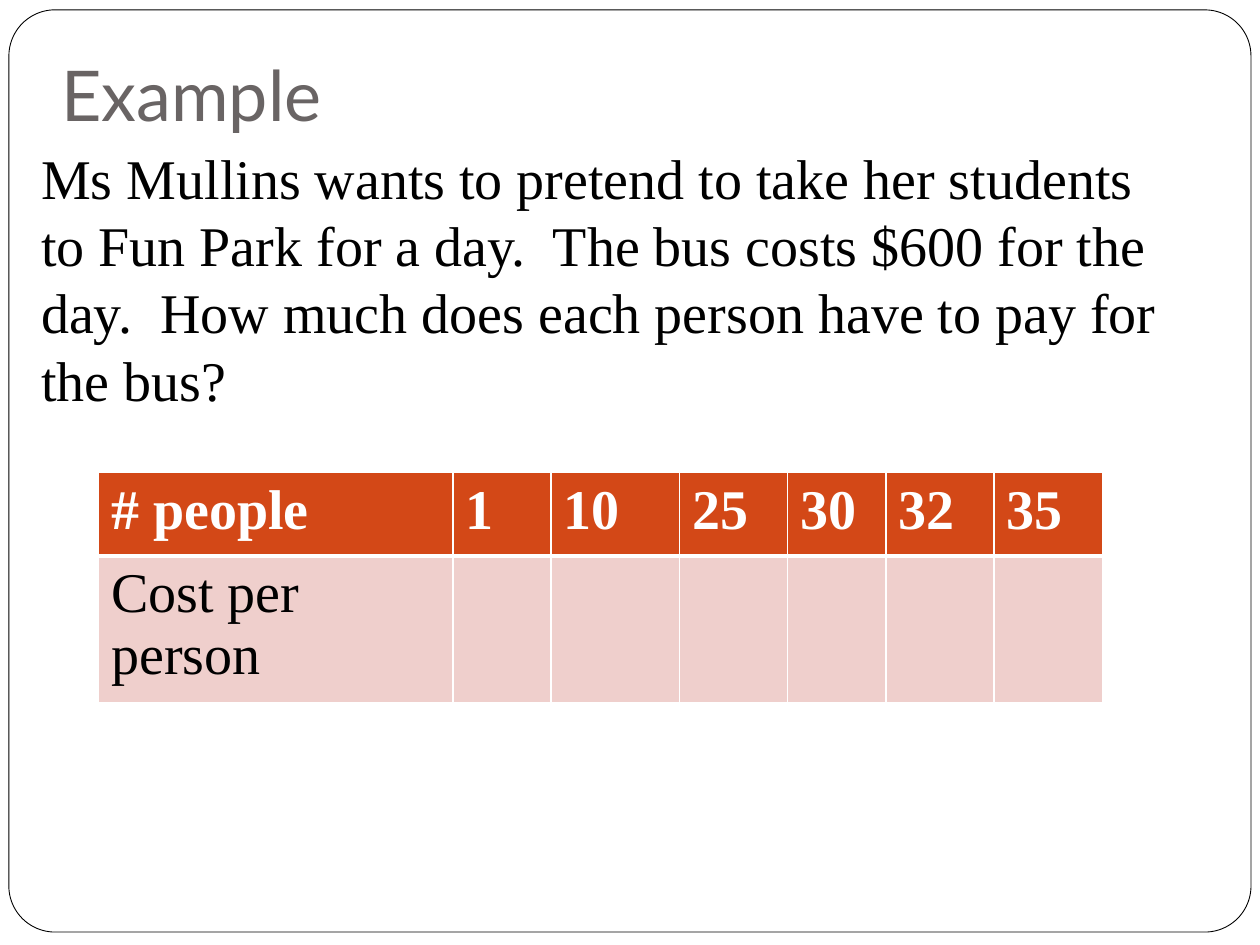
import pptx
import pptx.dml.color
import pptx.enum.shapes
import pptx.enum.text
import pptx.oxml
import pptx.oxml.ns
import pptx.util
from dataclasses import dataclass

Cm = pptx.util.Cm
Pt = pptx.util.Pt


@dataclass(frozen=True)
class Theme:
    white: str = "FFFFFF"
    black: str = "000000"
    title_grey: str = "696464"
    header_orange: str = "D34817"
    body_pink: str = "EFCFCC"
    title_font: str = "Lato"
    body_font: str = "Times New Roman"
    title_size: int = 40
    body_size: int = 32


THEME = Theme()


def rgb(color):
    return pptx.dml.color.RGBColor.from_string(color)


def add_run(paragraph, text, font, size, color, bold=False):
    run = paragraph.add_run()
    run.text = text
    run.font.name = font
    run.font.size = Pt(size)
    run.font.color.rgb = rgb(color)
    run.font.bold = bold


def add_text_box(slide, left, top, width, height, anchor):
    """Add a wrapping text box and return its text frame."""
    frame = slide.shapes.add_textbox(Cm(left), Cm(top), Cm(width), Cm(height)).text_frame
    frame.word_wrap = True
    frame.vertical_anchor = anchor
    return frame


def add_slide_frame(slide):
    shape = slide.shapes.add_shape(
        pptx.enum.shapes.MSO_SHAPE.ROUNDED_RECTANGLE, Cm(0.18), Cm(0.2), Cm(25.04), Cm(18.59))
    shape.adjustments[0] = 0.05
    shape.shadow.inherit = False
    shape.fill.solid()
    shape.fill.fore_color.rgb = rgb(THEME.white)
    shape.line.color.rgb = rgb(THEME.black)
    shape.line.width = Pt(0.5)


def set_borders(cell, bottom_width):
    """Draw white lines on all sides of a cell, widths in points."""
    properties = cell._tc.get_or_add_tcPr()
    widths = {"lnL": 1, "lnR": 1, "lnT": 1, "lnB": bottom_width}
    for position, (side, width) in enumerate(widths.items()):
        line = pptx.oxml.parse_xml(
            f'<a:{side} {pptx.oxml.ns.nsdecls("a")} w="{Pt(width)}"><a:solidFill>'
            f'<a:srgbClr val="{THEME.white}"/></a:solidFill></a:{side}>')
        properties.insert(position, line)


def add_cost_table(slide, rows, column_widths, row_heights):
    table = slide.shapes.add_table(
        len(rows), len(column_widths), Cm(1.99), Cm(9.53),
        Cm(sum(column_widths)), Cm(sum(row_heights))).table
    for column, width in zip(table.columns, column_widths):
        column.width = Cm(width)
    for row, height in zip(table.rows, row_heights):
        row.height = Cm(height)

    for row_index, texts in enumerate(rows):
        header = row_index == 0
        for cell, text in zip(table.rows[row_index].cells, texts):
            cell.fill.solid()
            cell.fill.fore_color.rgb = rgb(THEME.header_orange if header else THEME.body_pink)
            set_borders(cell, 3 if header else 1)
            if text:
                add_run(cell.text_frame.paragraphs[0], text, THEME.body_font, THEME.body_size,
                        THEME.white if header else THEME.black, header)


def main():
    presentation = pptx.Presentation()
    presentation.slide_width = Cm(25.4)
    presentation.slide_height = Cm(19.05)
    slide = presentation.slides.add_slide(presentation.slide_layouts[6])
    anchors = pptx.enum.text.MSO_ANCHOR

    # Rounded frame around the slide
    add_slide_frame(slide)

    # Title
    title = add_text_box(slide, 0.99, 0.58, 21.59, 2.41, anchors.BOTTOM)
    title.margin_bottom = Cm(0.25)
    add_run(title.paragraphs[0], "Example", THEME.title_font, THEME.title_size, THEME.title_grey)

    # Word problem
    problem = add_text_box(slide, 0.58, 2.77, 23.22, 5.74, anchors.TOP)
    add_run(problem.paragraphs[0],
            "Ms Mullins wants to pretend to take her students to Fun Park for a day.  "
            "The bus costs $600 for the day.  How much does each person have to pay for the bus?",
            THEME.body_font, THEME.body_size, THEME.black)

    # Table to fill in
    people = ["1", "10", "25", "30", "32", "35"]
    rows = [["# people"] + people, ["Cost per person"] + [""] * len(people)]
    add_cost_table(slide, rows, [7.14, 1.98, 2.59, 2.18, 1.98, 2.18, 2.18], [1.68, 2.95])

    presentation.save("out.pptx")


if __name__ == "__main__":
    main()
